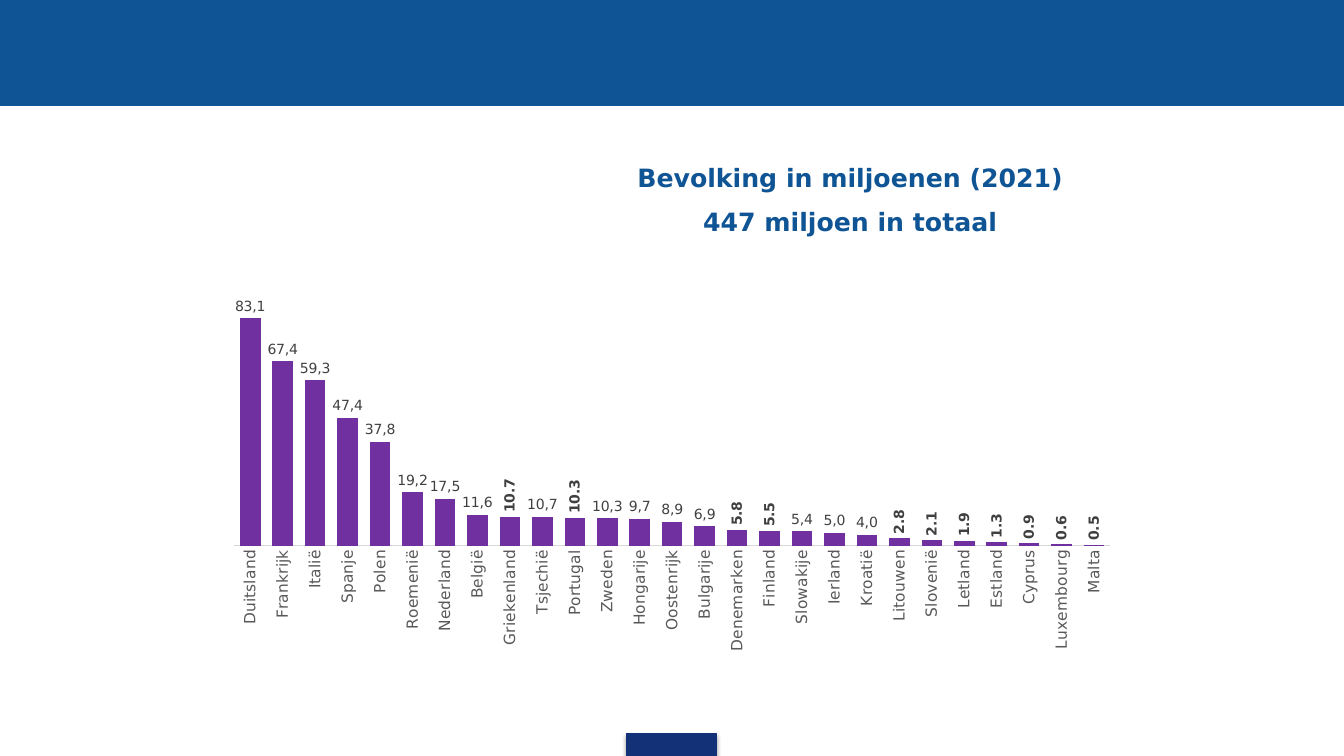
from dataclasses import dataclass
from typing import Any, Optional

from pptx import Presentation
from pptx.chart.data import CategoryChartData
from pptx.dml.color import RGBColor
from pptx.enum.chart import XL_CHART_TYPE, XL_LABEL_POSITION, XL_TICK_MARK
from pptx.enum.shapes import MSO_SHAPE
from pptx.enum.text import MSO_ANCHOR, PP_ALIGN
from pptx.oxml import parse_xml
from pptx.oxml.ns import nsdecls, qn
from pptx.util import Pt

COLUMN = XL_CHART_TYPE.COLUMN_CLUSTERED
OUTSIDE_END = XL_LABEL_POSITION.OUTSIDE_END
NO_TICK = XL_TICK_MARK.NONE
RECTANGLE = MSO_SHAPE.RECTANGLE
MIDDLE = MSO_ANCHOR.MIDDLE
CENTER = PP_ALIGN.CENTER
UPRIGHT = "0"
VERTICAL = "-5400000"


@dataclass(frozen=True)
class Theme:
    font: str = "DejaVu Sans"
    blue: str = "0F5494"
    navy: str = "133176"
    purple: str = "7030A0"
    axis_text: str = "595959"
    axis_line: str = "D9D9D9"
    label_text: str = "404040"
    title_size: float = 18
    axis_size: float = 11
    label_size: float = 10


@dataclass(frozen=True)
class Band:
    left: float
    top: float
    width: float
    height: float
    color: str
    shadow: bool = False


@dataclass(frozen=True)
class Country:
    name: str
    population: float
    label: Optional[str] = None


THEME = Theme()
BANDS = [
    Band(0, 0, 960, 75.6, THEME.blue),
    Band(447.5, 524.2, 64.4, 15.8, THEME.navy, shadow=True),
]
TITLE_LINES = ["Bevolking in miljoenen (2021)", "447 miljoen in totaal"]
PLOT_AREA = {"x": 0.017, "y": 0.061, "w": 0.966, "h": 0.635}
COUNTRIES = [
    Country("Duitsland", 82.9, "83,1"),
    Country("Frankrijk", 67.2, "67,4"),
    Country("Italië", 60.4, "59,3"),
    Country("Spanje", 46.7, "47,4"),
    Country("Polen", 38, "37,8"),
    Country("Roemenië", 19.5, "19,2"),
    Country("Nederland", 17.2, "17,5"),
    Country("België", 11.4, "11,6"),
    Country("Griekenland", 10.7),
    Country("Tsjechië", 10.6, "10,7"),
    Country("Portugal", 10.3),
    Country("Zweden", 10.1, "10,3"),
    Country("Hongarije", 9.8, "9,7"),
    Country("Oostenrijk", 8.8, "8,9"),
    Country("Bulgarije", 7.1, "6,9"),
    Country("Denemarken", 5.8),
    Country("Finland", 5.5),
    Country("Slowakije", 5.4, "5,4"),
    Country("Ierland", 4.8, "5,0"),
    Country("Kroatië", 4.1, "4,0"),
    Country("Litouwen", 2.8),
    Country("Slovenië", 2.1),
    Country("Letland", 1.9),
    Country("Estland", 1.3),
    Country("Cyprus", 0.9),
    Country("Luxembourg", 0.6),
    Country("Malta", 0.5),
]


def apply_format(target: Any, values: dict[str, Any]) -> None:
    for name, value in values.items():
        setattr(target, name, value)


def style_font(font: Any, size: float, color: str, bold: bool = False) -> None:
    apply_format(font, {"name": THEME.font, "size": Pt(size), "bold": bold})
    font.color.rgb = RGBColor.from_string(color)


def rotate_text(element: Any, angle: str) -> None:
    body = next(element.iter(qn("a:bodyPr")))
    body.set("rot", angle)
    body.set("vert", "horz")


def draw_band(page: Any, band: Band) -> None:
    shape = page.shapes.add_shape(
        RECTANGLE, Pt(band.left), Pt(band.top), Pt(band.width), Pt(band.height)
    )
    color = RGBColor.from_string(band.color)
    shape.fill.solid()
    shape.fill.fore_color.rgb = color
    shape.line.color.rgb = color
    shape.line.width = Pt(0.75)
    shape.shadow.inherit = False
    if band.shadow:
        effects = shape.element.spPr.find(qn("a:effectLst"))
        effects.append(parse_xml(
            f'<a:outerShdw {nsdecls("a")} blurRad="{Pt(3.1)}" dist="{Pt(1.8)}" '
            'dir="5400000" rotWithShape="0"><a:srgbClr val="000000">'
            '<a:alpha val="35000"/></a:srgbClr></a:outerShdw>'
        ))


def draw_title(page: Any) -> None:
    box = page.shapes.add_textbox(Pt(161.3), Pt(111.6), Pt(864), Pt(62))
    frame = box.text_frame
    apply_format(frame, {"word_wrap": True, "vertical_anchor": MIDDLE})
    for index, line in enumerate(TITLE_LINES):
        para = frame.add_paragraph() if index else frame.paragraphs[0]
        para.alignment = CENTER
        para.space_before = Pt(10 if index else 0)
        properties = para._p.get_or_add_pPr()
        properties.set("marL", str(Pt(28)))
        properties.set("indent", "0")
        span = para.add_run()
        span.text = line
        style_font(span.font, THEME.title_size, THEME.blue, True)


def style_axes(chart: Any) -> None:
    apply_format(chart.value_axis, {
        "visible": False,
        "has_major_gridlines": False,
        "minimum_scale": 0,
        "maximum_scale": 90,
    })
    axis = chart.category_axis
    apply_format(axis, {
        "has_major_gridlines": False,
        "major_tick_mark": NO_TICK,
        "minor_tick_mark": NO_TICK,
    })
    axis.format.line.color.rgb = RGBColor.from_string(THEME.axis_line)
    axis.format.line.width = Pt(0.75)
    style_font(axis.tick_labels.font, THEME.axis_size, THEME.axis_text)
    rotate_text(axis._element, VERTICAL)


def place_plot_area(chart: Any) -> None:
    area = chart._chartSpace.find(qn("c:chart")).find(qn("c:plotArea"))
    for layout in area.findall(qn("c:layout")):
        area.remove(layout)
    modes = "".join(f'<c:{side}Mode val="edge"/>' for side in "xy")
    sizes = "".join(f'<c:{side} val="{size}"/>' for side, size in PLOT_AREA.items())
    area.insert(0, parse_xml(
        f'<c:layout {nsdecls("c")}><c:manualLayout><c:layoutTarget val="inner"/>'
        f"{modes}{sizes}</c:manualLayout></c:layout>"
    ))


def label_columns(series: Any) -> None:
    labels = series.data_labels
    apply_format(labels, {
        "show_value": True,
        "position": OUTSIDE_END,
        "number_format": "#,##0.0;[Red]#,##0.0",
        "number_format_is_linked": False,
    })
    style_font(labels.font, THEME.label_size, THEME.label_text, True)
    rotate_text(labels._element, VERTICAL)
    for index, country in enumerate(COUNTRIES):
        if country.label:
            label = series.points[index].data_label
            span = label.text_frame.paragraphs[0].add_run()
            span.text = country.label
            style_font(span.font, THEME.label_size, THEME.label_text)
            rotate_text(label.text_frame._element, UPRIGHT)
            label.position = OUTSIDE_END


def draw_chart(page: Any) -> None:
    data = CategoryChartData()
    data.categories = [country.name for country in COUNTRIES]
    data.add_series("Series 1", [country.population for country in COUNTRIES])
    chart = page.shapes.add_chart(
        COLUMN, Pt(156.2), Pt(196.6), Pt(648), Pt(277.9), data
    ).chart
    apply_format(chart, {"has_title": False, "has_legend": False})
    style_font(chart.font, THEME.label_size, "000000")
    plot = chart.plots[0]
    apply_format(plot, {"gap_width": 58, "overlap": -27, "vary_by_categories": False})
    series = plot.series[0]
    series.format.fill.solid()
    series.format.fill.fore_color.rgb = RGBColor.from_string(THEME.purple)
    style_axes(chart)
    place_plot_area(chart)
    label_columns(series)


def main() -> None:
    deck = Presentation()
    apply_format(deck, {"slide_width": Pt(960), "slide_height": Pt(540)})
    page = deck.slides.add_slide(deck.slide_layouts[6])
    for band in BANDS:
        draw_band(page, band)
    draw_title(page)
    draw_chart(page)
    deck.save("out.pptx")


if __name__ == "__main__":
    main()
